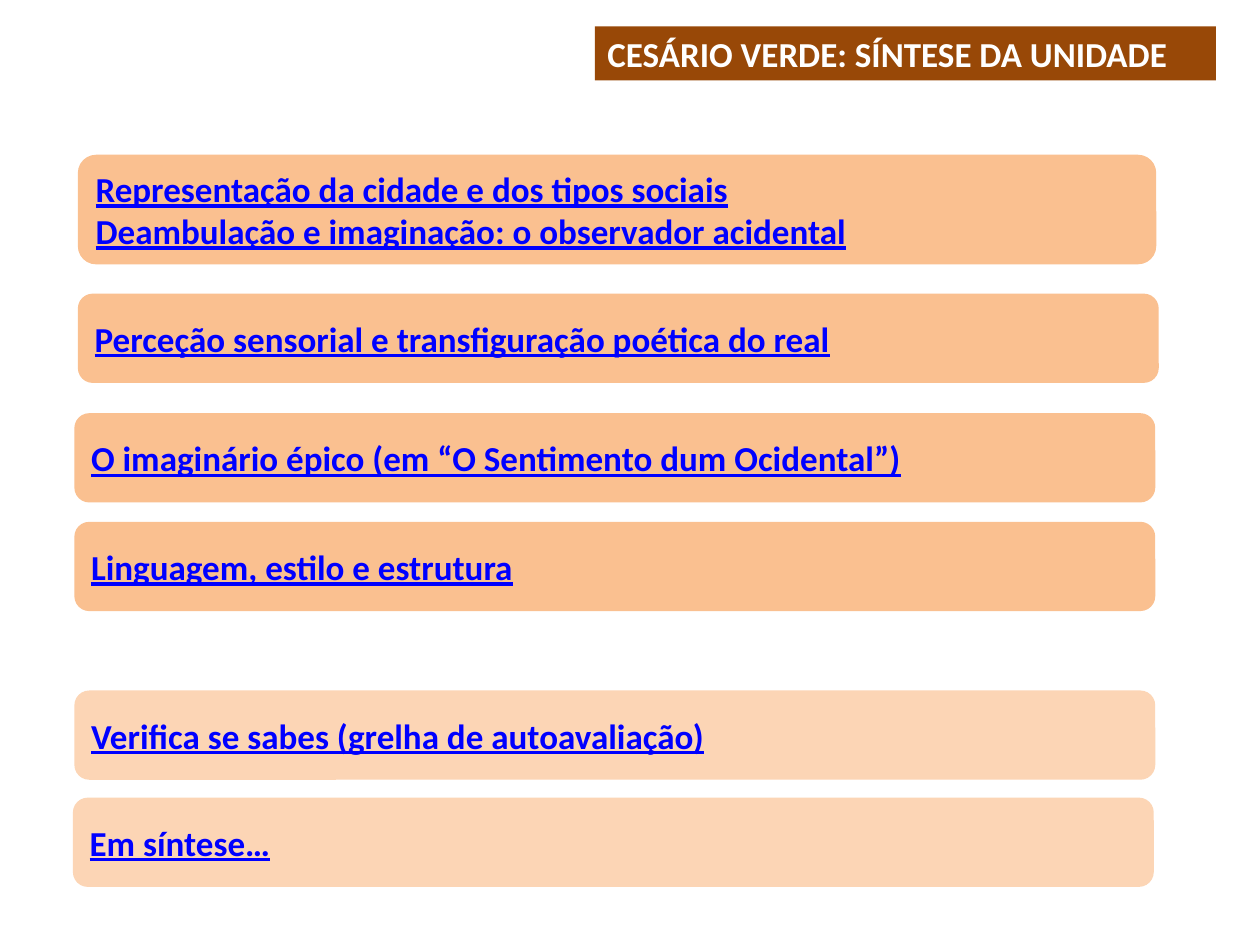
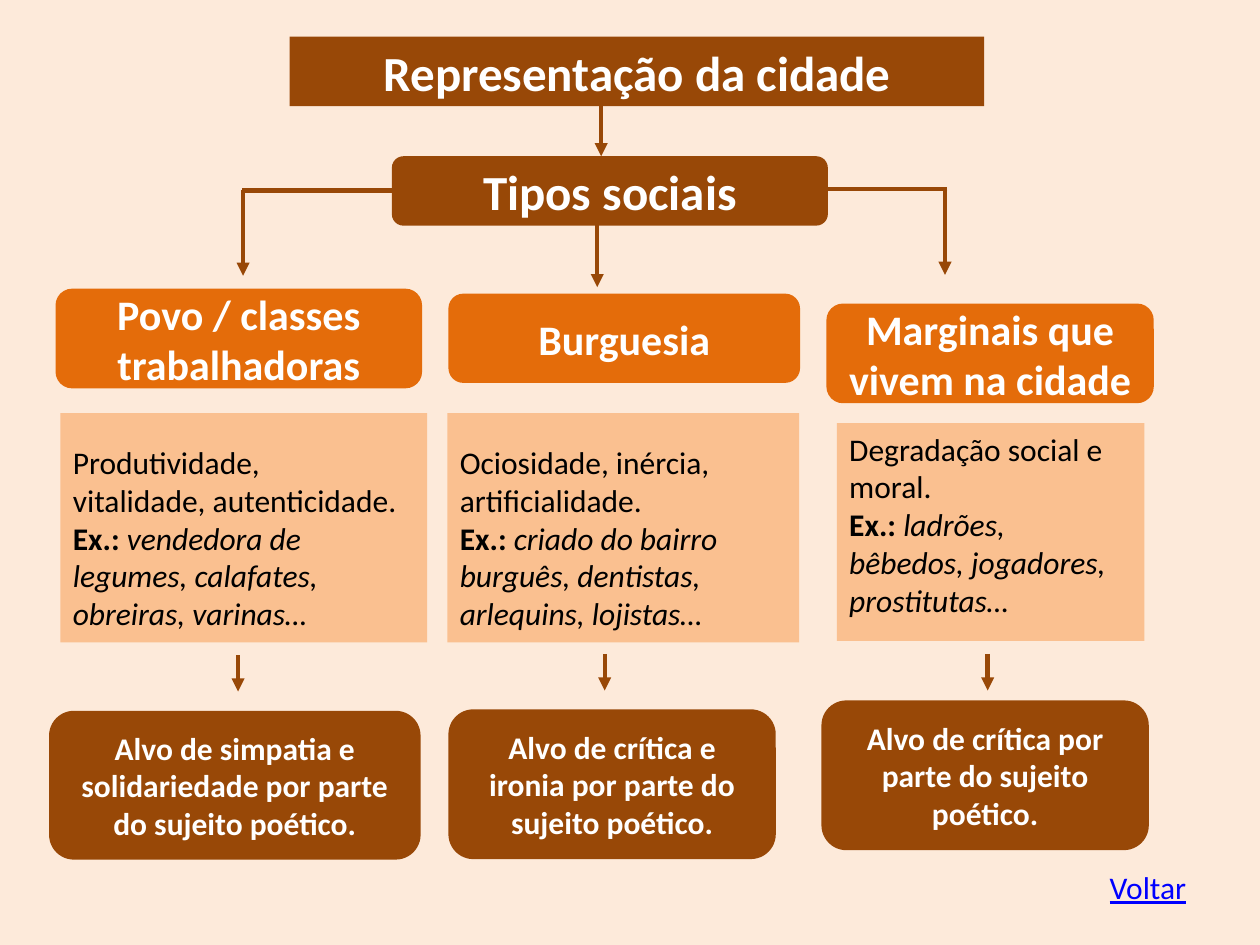
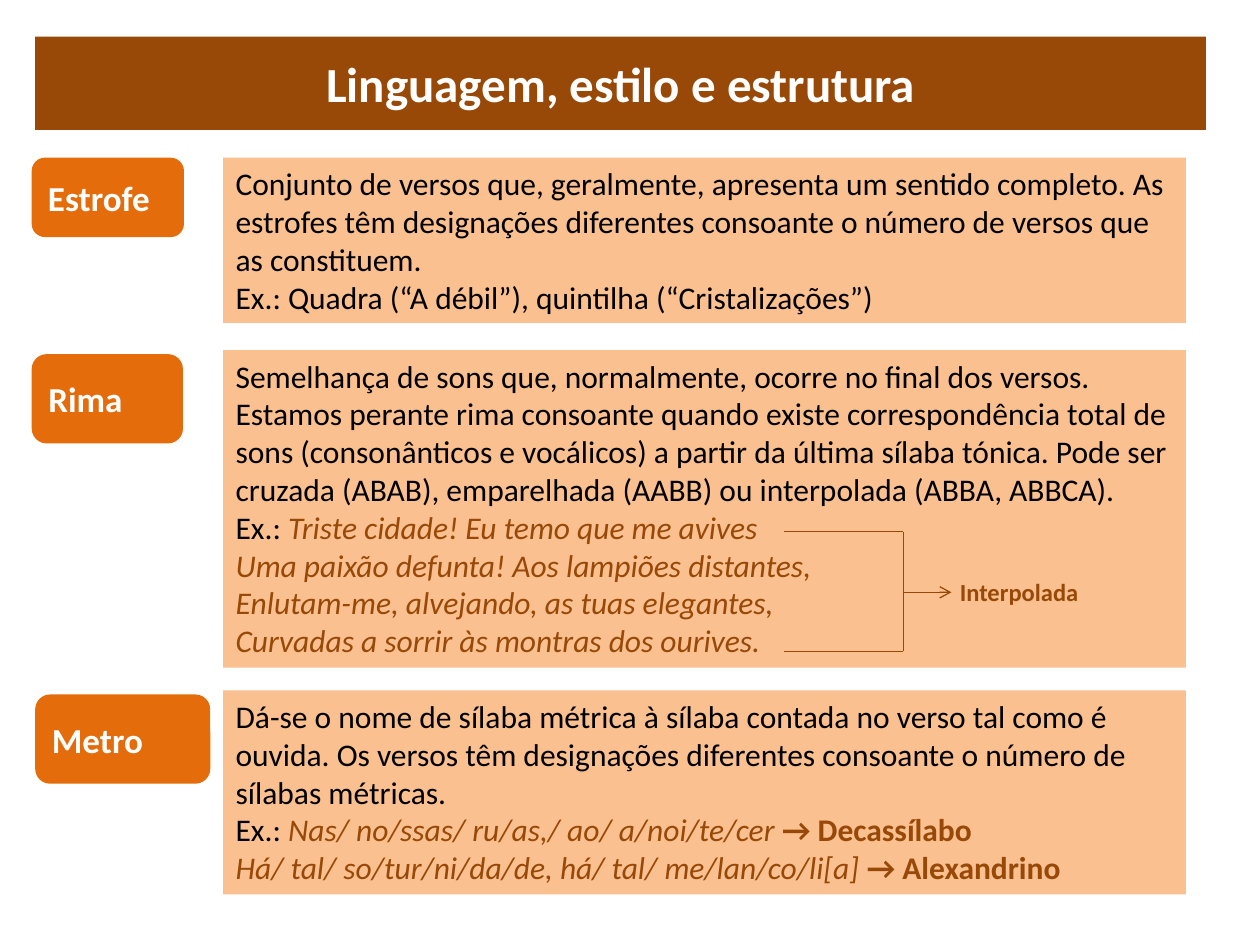
"""Builds three slides on the poetry of Cesário Verde."""
from lxml.etree import SubElement
from pptx import Presentation
from pptx.dml.color import RGBColor
from pptx.enum.shapes import MSO_CONNECTOR, MSO_SHAPE
from pptx.enum.text import MSO_ANCHOR, MSO_AUTO_SIZE, PP_ALIGN
from pptx.oxml.ns import qn
from pptx.util import Cm, Pt

FONT = "Calibri"
COLORS = {
    "brown": "984807", "orange": "E46C0A", "peach": "FAC090", "light": "FCD5B5",
    "cream": "FDEADA", "white": "FFFFFF", "black": "000000", "link": "0000FF",
}
LEFT, CENTER = PP_ALIGN.LEFT, PP_ALIGN.CENTER


def rgb(name):
    return RGBColor.from_string(COLORS[name])


def write(sp, paras, size, color, marks="", align=LEFT, anchor=MSO_ANCHOR.MIDDLE):
    tf = sp.text_frame
    tf.word_wrap = True
    tf.auto_size = MSO_AUTO_SIZE.NONE
    tf.vertical_anchor = anchor
    for i, runs in enumerate(paras):
        p = tf.paragraphs[0] if i == 0 else tf.add_paragraph()
        p.alignment = align
        for run in [(runs,)] if isinstance(runs, str) else runs:
            text, run_marks, run_color = (*run, marks, color)[:3] if len(run) == 1 else (*run, color)[:3]
            r = p.add_run()
            r.text = text
            r.font.name = FONT
            r.font.size = Pt(size)
            r.font.bold = "b" in run_marks
            r.font.italic = "i" in run_marks
            r.font.underline = "u" in run_marks
            r.font.color.rgb = rgb(run_color)


def paint(sp, fill):
    sp.fill.solid()
    sp.fill.fore_color.rgb = rgb(fill)
    sp.line.fill.background()


def add_box(s, kind, at, fill):
    sp = s.shapes.add_shape(kind, *map(Cm, at))
    sp.shadow.inherit = False
    paint(sp, fill)
    return sp


def add_tile(s, at, fill, paras, size, color="white", marks="b", align=CENTER):
    write(add_box(s, MSO_SHAPE.ROUNDED_RECTANGLE, at, fill), paras, size, color, marks, align)


def add_panel(s, at, paras, top=0.13):
    sp = add_box(s, MSO_SHAPE.RECTANGLE, at, "peach")
    write(sp, paras, 18, "black", anchor=MSO_ANCHOR.TOP)
    sp.text_frame.margin_top = Cm(top)


def add_label(s, at, text, size, color, marks, wrap=True):
    sp = s.shapes.add_textbox(*map(Cm, at))
    write(sp, [text], size, color, marks, anchor=MSO_ANCHOR.TOP)
    sp.text_frame.word_wrap = wrap


def add_line(s, x1, y1, x2, y2, width=2.5, head=None):
    cn = s.shapes.add_connector(MSO_CONNECTOR.STRAIGHT, Cm(x1), Cm(y1), Cm(x2), Cm(y2))
    cn.line.width = Pt(width)
    cn.line.color.rgb = rgb("brown")
    if head:
        SubElement(cn.line._get_or_add_ln(), qn("a:tailEnd"), type=head)
    SubElement(cn._element.spPr, qn("a:effectLst"))


def add_slide(prs, title, at, size=28, background="white", align=CENTER, geometry="roundRect"):
    s = prs.slides.add_slide(prs.slide_layouts[5])
    s.background.fill.solid()
    s.background.fill.fore_color.rgb = rgb(background)
    sp = s.shapes.title
    sp.left, sp.top, sp.width, sp.height = map(Cm, at)
    geom = SubElement(sp._element.spPr, qn("a:prstGeom"), prst=geometry)
    SubElement(geom, qn("a:avLst"))
    paint(sp, "brown")
    write(sp, [title], size, "white", "b", align)
    return s


def build_index(prs):
    s = add_slide(prs, "CESÁRIO VERDE: SÍNTESE DA UNIDADE", (11.99, 0.53, 12.52, 1.09),
                  size=20, align=LEFT, geometry="rect")
    entries = [
        ((1.57, 3.12, 21.74, 2.21), "peach", ["Representação da cidade e dos tipos sociais",
                                             "Deambulação e imaginação: o observador acidental"]),
        ((1.57, 5.92, 21.79, 1.8), "peach", ["Perceção sensorial e transfiguração poética do real"]),
        ((1.5, 8.33, 21.79, 1.8), "peach", ["O imaginário épico (em “O Sentimento dum Ocidental”)"]),
        ((1.5, 10.52, 21.79, 1.8), "peach", ["Linguagem, estilo e estrutura"]),
        ((1.5, 13.92, 21.79, 1.8), "light", ["Verifica se sabes (grelha de autoavaliação)"]),
        ((1.47, 16.08, 21.79, 1.8), "light", ["Em síntese…"]),
    ]
    for at, fill, paras in entries:
        add_tile(s, at, fill, paras, 20, "link", "bu", LEFT)


def build_city(prs):
    s = add_slide(prs, "Representação da cidade", (5.84, 0.74, 14, 1.4), background="cream")
    add_tile(s, (7.9, 3.15, 8.79, 1.4), "brown", ["Tipos sociais"], 28)
    add_line(s, 7.9, 3.84, 4.88, 3.84)
    add_line(s, 19.1, 3.81, 16.08, 3.81)
    arrows = [(12.12, 2.06, 3.15), (12.04, 4.19, 5.79), (4.9, 3.84, 5.56), (19.05, 3.81, 5.54),
              (4.8, 13.21, 13.94), (12.19, 13.18, 13.92), (19.91, 13.18, 13.92)]
    for x, top, bottom in arrows:
        add_line(s, x, top, x, bottom, head="triangle")

    groups = [
        ((1.12, 5.82, 7.39, 2.01), "Povo / classes trabalhadoras"),
        ((9.04, 5.92, 7.09, 1.8), "Burguesia"),
        ((16.66, 6.12, 6.6, 2.01), "Marginais que vivem na cidade"),
    ]
    for at, text in groups:
        add_tile(s, at, "orange", [text], 24)

    traits = [
        ((1.22, 8.33, 7.39, 4.62), 0.6, ["Produtividade,", "vitalidade, autenticidade."],
         ["vendedora de", "legumes, calafates,", "obreiras, varinas…"]),
        ((9.02, 8.33, 7.09, 4.62), 0.6, ["Ociosidade, inércia,", "artificialidade."],
         ["criado do bairro", "burguês, dentistas,", "arlequins, lojistas…"]),
        ((16.87, 8.53, 6.2, 4.39), 0.13, ["Degradação social e moral."],
         ["ladrões,", "bêbedos, jogadores,", "prostitutas…"]),
    ]
    for at, top, qualities, (first, *others) in traits:
        examples = [[("Ex.: ", "b"), (first, "i")]] + [[(text, "i")] for text in others]
        add_panel(s, at, qualities + examples, top)

    verdicts = [
        ((0.99, 14.33, 7.49, 3), ["Alvo de simpatia e", "solidariedade por parte", "do sujeito poético."]),
        ((9.04, 14.3, 6.6, 3.02), ["Alvo de crítica e ironia por parte do sujeito poético."]),
        ((16.56, 14.12, 6.6, 3.02), ["Alvo de crítica por parte do sujeito poético."]),
    ]
    for at, paras in verdicts:
        add_tile(s, at, "brown", paras, 18)
    add_label(s, (22.12, 17.37, 2.08, 1.02), "Voltar", 18, "link", "u", wrap=False)


def build_language(prs):
    s = add_slide(prs, "Linguagem, estilo e estrutura", (0.71, 0.74, 23.6, 1.88))
    terms = [
        ("Estrofe", (0.64, 3.18, 3.07, 1.6), 3.18, 3.33, [
            "Conjunto de versos que, geralmente, apresenta um sentido completo. As estrofes têm "
            "designações diferentes consoante o número de versos que as constituem.",
            "Ex.: Quadra (“A débil”), quintilha (“Cristalizações”)"]),
        ("Rima", (0.64, 7.14, 3.05, 1.8), 7.06, 6.4, [
            "Semelhança de sons que, normalmente, ocorre no final dos versos. Estamos perante rima "
            "consoante quando existe correspondência total de sons (consonânticos e vocálicos) a "
            "partir da última sílaba tónica. Pode ser cruzada (ABAB), emparelhada (AABB) ou "
            "interpolada (ABBA, ABBCA).",
            [("Ex.: ",), ("Triste cidade! Eu temo que me avives", "i", "brown")],
            [("Uma paixão defunta! Aos lampiões distantes,", "i", "brown")],
            [("Enlutam-me, alvejando, as tuas elegantes,", "i", "brown")],
            [("Curvadas a sorrir às montras dos ourives.", "i", "brown")]]),
        ("Metro", (0.71, 14, 3.53, 1.8), 13.92, 4.11, [
            "Dá-se o nome de sílaba métrica à sílaba contada no verso tal como é ouvida. Os versos "
            "têm designações diferentes consoante o número de sílabas métricas.",
            [("Ex.: ",), ("Nas/ no/ssas/ ru/as,/ ao/ a/noi/te/cer ", "i", "brown"),
             ("→ Decassílabo", "b", "brown")],
            [("Há/ tal/ so/tur/ni/da/de, há/ tal/ me/lan/co/li[a] ", "i", "brown"),
             ("→ Alexandrino", "b", "brown")]]),
    ]
    for term, at, top, height, paras in terms:
        add_tile(s, at, "orange", [term], 20, align=LEFT)
        add_panel(s, (4.5, top, 19.41, height), paras)

    left, right, top, bottom = 15.8, 18.21, 10.72, 13.13
    for y in (top, bottom):
        add_line(s, left, y, right, y, 0.75)
    add_line(s, right, bottom, right, top, 0.75)
    add_line(s, right, 11.94, 19.18, 11.94, 0.75, "arrow")
    add_label(s, (19.1, 11.51, 3.4, 0.86), "Interpolada", 14, "brown", "b")


def main():
    prs = Presentation()
    prs.slide_width, prs.slide_height = Cm(25.4), Cm(19.05)
    build_index(prs)
    build_city(prs)
    build_language(prs)
    prs.save("out.pptx")


if __name__ == "__main__":
    main()
